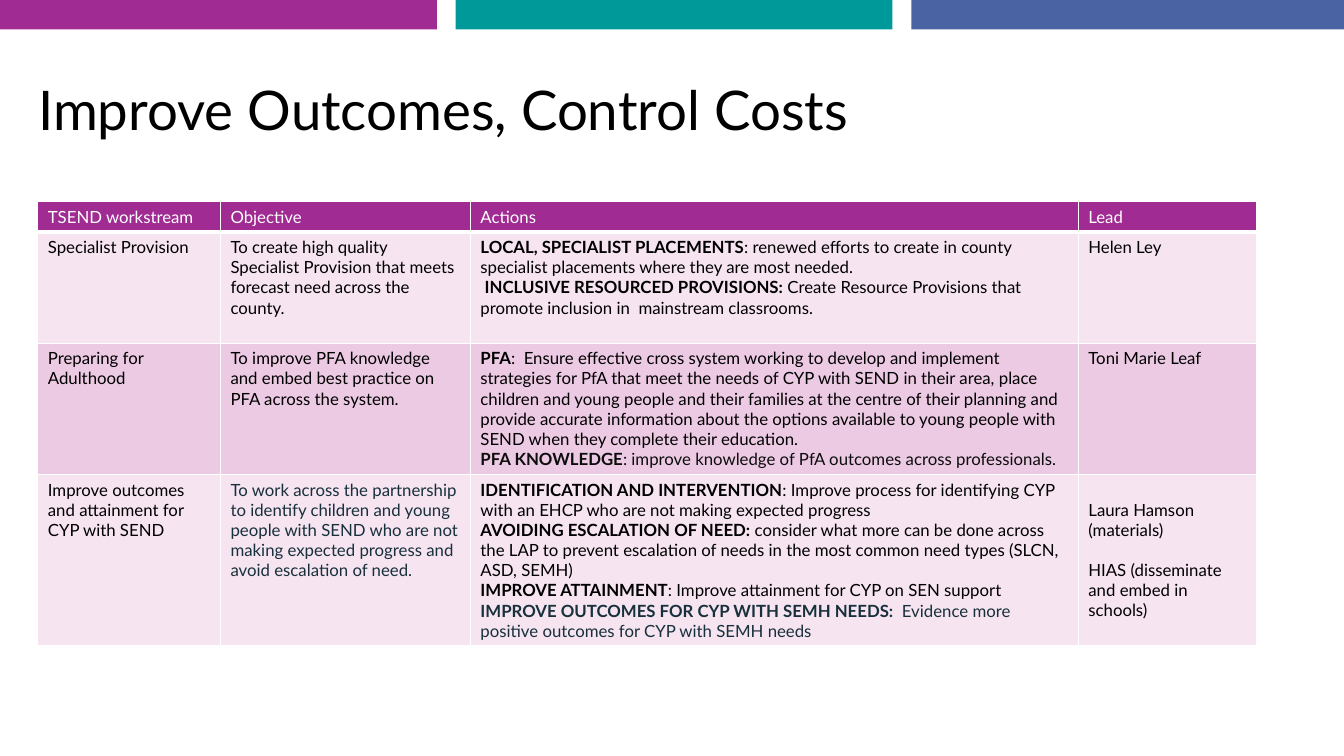
from lxml import etree
from pptx import Presentation
from pptx.dml.color import RGBColor
from pptx.enum.shapes import MSO_SHAPE
from pptx.enum.text import MSO_ANCHOR
from pptx.oxml.ns import qn
from pptx.util import Emu, Pt

RECTANGLE = MSO_SHAPE.RECTANGLE
MIDDLE = MSO_ANCHOR.MIDDLE

PURPLE = RGBColor(0xA0, 0x2B, 0x93)
TEAL = RGBColor(0x00, 0x99, 0x99)
BLUE = RGBColor(0x4A, 0x63, 0xA3)
PALE_PINK = RGBColor(0xF6, 0xE4, 0xF1)
PINK = RGBColor(0xEC, 0xCA, 0xE3)
WHITE = RGBColor(0xFF, 0xFF, 0xFF)
BLACK = RGBColor(0x00, 0x00, 0x00)
NEAR_BLACK = RGBColor(0x0D, 0x0D, 0x0D)
SLATE = RGBColor(0x17, 0x30, 0x3B)

SLIDE_SIZE = (1280, 720)
COLUMN_WIDTHS = (174, 238, 579, 170)
ROW_HEIGHTS = (28, 106, 125, 163)
BLANK_LINE = 19
CELL_INSET = 5

HEADER = ["TSEND workstream", "Objective", "Actions", "Lead"]
WORKSTREAMS = [
    [
        [("Specialist Provision", BLACK)],
        [("To create high quality Specialist Provision that meets forecast need "
          "across the county.", BLACK)],
        [("**LOCAL, SPECIALIST PLACEMENTS**: renewed efforts to create in county "
          "specialist placements where they are most needed.", BLACK),
         (" **INCLUSIVE RESOURCED PROVISIONS: **Create Resource Provisions that "
          "promote inclusion in  mainstream classrooms.", BLACK)],
        [("Helen Ley", BLACK)],
    ],
    [
        [("Preparing for Adulthood", BLACK)],
        [("To improve PFA knowledge and embed best practice on PFA across the "
          "system.", BLACK)],
        [("**PFA**:  Ensure effective cross system working to develop and implement "
          "strategies for PfA that meet the needs of CYP with SEND in their area, "
          "place children and young people and their families at the centre of their "
          "planning and provide accurate information about the options available to "
          "young people with SEND when they complete their education.", BLACK),
         ("**PFA KNOWLEDGE**: improve knowledge of PfA outcomes across "
          "professionals.", NEAR_BLACK)],
        [("Toni Marie Leaf", BLACK)],
    ],
    [
        [("Improve outcomes and attainment for CYP with SEND", BLACK)],
        [("To work across the partnership to identify children and young people with "
          "SEND who are not making expected progress and avoid escalation of need.",
          SLATE)],
        [("**IDENTIFICATION AND INTERVENTION**: Improve process for identifying CYP "
          "with an EHCP who are not making expected progress", BLACK),
         ("**AVOIDING ESCALATION OF NEED: **consider what more can be done across "
          "the LAP to prevent escalation of needs in the most common need types "
          "(SLCN, ASD, SEMH)", BLACK),
         ("**IMPROVE ATTAINMENT**: Improve attainment for CYP on SEN support", BLACK),
         ("**IMPROVE OUTCOMES FOR CYP WITH SEMH NEEDS:  **Evidence more positive "
          "outcomes for CYP with SEMH needs", SLATE)],
        [("Laura Hamson (materials)", BLACK),
         ("HIAS (disseminate and embed in  schools)", BLACK)],
    ],
]


def px(length):
    """Turn whole pixels into EMU."""
    return Emu(length * 9525)


class SlideBuilder:
    """Hold the text style and the current slide, and add elements to it."""

    def __init__(self, page, font_name):
        self.page = page
        self.font_name = font_name

    def bar(self, left, top, width, height, color):
        """Add a plain filled rectangle."""
        shape = self.page.shapes.add_shape(
            RECTANGLE, px(left), px(top), px(width), px(height))
        shape.shadow.inherit = False
        shape.fill.solid()
        shape.fill.fore_color.rgb = color
        shape.line.fill.background()

    def add_spans(self, para, text, size, color):
        """Add runs to a paragraph, with bold text between double asterisks."""
        for index, part in enumerate(text.split("**")):
            if part:
                span = para.add_run()
                span.text = part
                span.font.name = self.font_name
                span.font.size = Pt(size)
                span.font.bold = index % 2 == 1
                span.font.color.rgb = color

    def title(self, left, top, width, height, text):
        """Add the slide title."""
        box = self.page.shapes.add_textbox(px(left), px(top), px(width), px(height))
        frame = box.text_frame
        frame.word_wrap = True
        frame.vertical_anchor = MIDDLE
        para = frame.paragraphs[0]
        para.line_spacing = 0.9
        self.add_spans(para, text, 39, BLACK)

    def table(self, left, top, widths, heights):
        """Add an unstyled table with the given column widths and row heights."""
        grid = self.page.shapes.add_table(
            len(heights), len(widths), px(left), px(top),
            px(sum(widths)), px(sum(heights))).table
        grid.first_row = False
        grid.horz_banding = False
        for column, width in zip(grid.columns, widths):
            column.width = px(width)
        for row, height in zip(grid.rows, heights):
            row.height = px(height)
        return grid

    def cell(self, cell, paragraphs, fill, bottom_width=1):
        """Fill a cell with paragraphs, a colour and white borders."""
        properties = cell._tc.get_or_add_tcPr()
        for side, width in (("L", 1), ("R", 1), ("T", 1), ("B", bottom_width)):
            line = etree.SubElement(properties, qn(f"a:ln{side}"), w=str(Pt(width)))
            solid = etree.SubElement(line, qn("a:solidFill"))
            etree.SubElement(solid, qn("a:srgbClr"), val=str(WHITE))
        cell.fill.solid()
        cell.fill.fore_color.rgb = fill
        frame = cell.text_frame
        for index, (text, color) in enumerate(paragraphs):
            para = frame.add_paragraph() if index else frame.paragraphs[0]
            self.add_spans(para, text, 12, color)


def main():
    """Build the workstream slide and save it."""
    deck = Presentation()
    deck.slide_width, deck.slide_height = (px(side) for side in SLIDE_SIZE)
    page = deck.slides.add_slide(deck.slide_layouts[6])
    builder = SlideBuilder(page, "Lato")

    for index, color in enumerate((PURPLE, TEAL, BLUE)):
        builder.bar(index * 434, 0, 416, 28, color)

    grid = builder.table(36, 192, COLUMN_WIDTHS, ROW_HEIGHTS)
    for column, heading in enumerate(HEADER):
        builder.cell(grid.cell(0, column), [(heading, WHITE)], PURPLE, 3)
    for row, workstream in enumerate(WORKSTREAMS, start=1):
        fill = PALE_PINK if row % 2 else PINK
        for column, paragraphs in enumerate(workstream):
            builder.cell(grid.cell(row, column), paragraphs, fill)

    shared_lead = grid.cell(3, 3)
    shared_lead.margin_top = px(CELL_INSET + BLANK_LINE)
    shared_lead.text_frame.paragraphs[1].space_before = px(BLANK_LINE)

    builder.title(27, 38, 1226, 139, "Improve Outcomes, Control Costs")
    deck.save("out.pptx")


if __name__ == "__main__":
    main()
